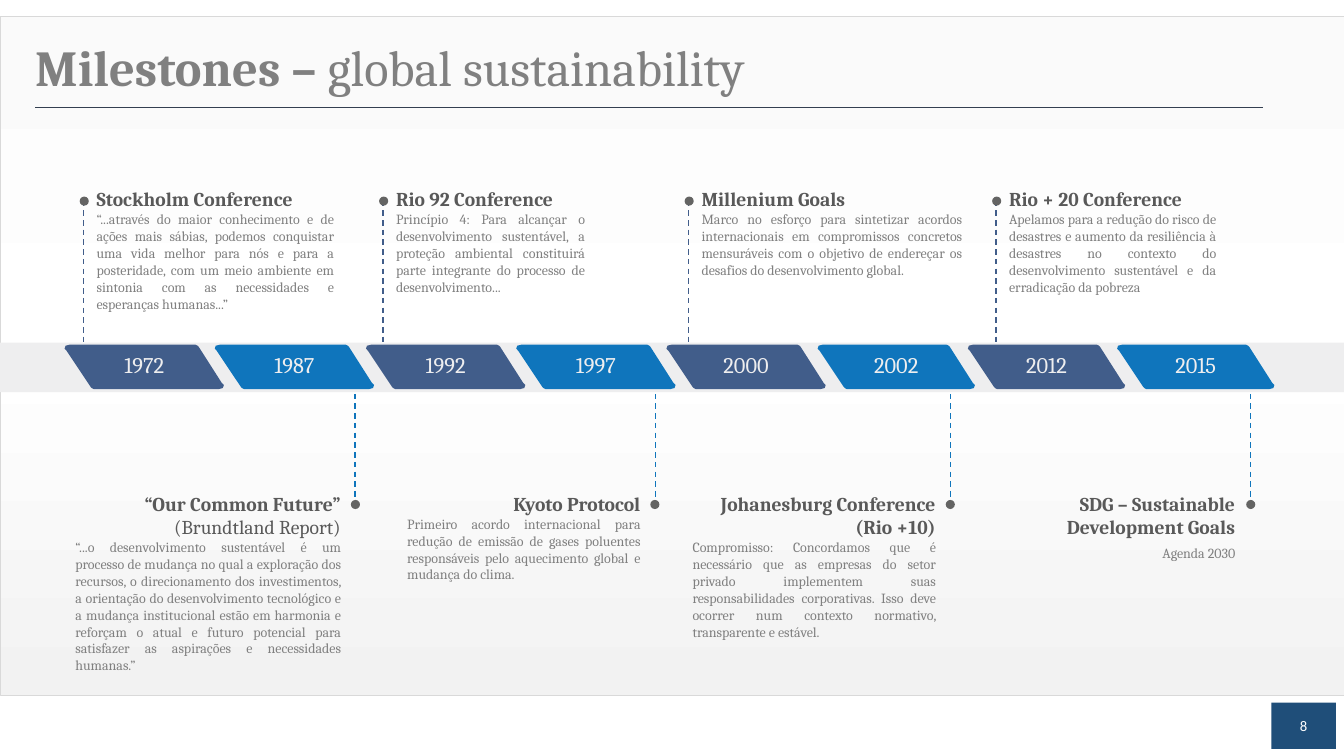
import copy
import pptx
import pptx.util
import pptx.dml.color
import pptx.enum.dml
import pptx.enum.shapes
import pptx.enum.text
import pptx.oxml.ns
import lxml.etree

Inches = pptx.util.Inches
Pt = pptx.util.Pt
ALIGN = pptx.enum.text.PP_ALIGN
SHAPE = pptx.enum.shapes.MSO_SHAPE
DASH = pptx.enum.dml.MSO_LINE
NAVY, BLUE, DARK, GRAY, LIGHT = "415D8A", "0F75BC", "595959", "808080", "EEEEEF"


def paint(fill, color):
    fill.solid()
    fill.fore_color.rgb = pptx.dml.color.RGBColor.from_string(color)


def style(paragraph, size, color, align, bold=False, font="Cambria"):
    paragraph.alignment = align
    for run in paragraph.runs:
        run.font.name = font
        run.font.size = Pt(size)
        run.font.bold = bold
        paint(run.font.fill, color)


presentation = pptx.Presentation()
presentation.slide_width = Inches(13.33)
presentation.slide_height = Inches(7.5)
slide = presentation.slides.add_slide(presentation.slide_layouts[6])
shapes = slide.shapes

panel = shapes.add_shape(SHAPE.RECTANGLE, 0, Inches(0.16), Inches(13.33), Inches(6.74))
panel.shadow.inherit = False
panel.fill.gradient()
panel.fill.gradient_angle = 90
stop_list = panel.fill._fill._gradFill.gsLst
stop_list.append(copy.deepcopy(stop_list[-1]))
for stop, position, color in zip(panel.fill.gradient_stops, (0, 0.5, 1), ("F2F2F2", "FFFFFF", "FAFAFA")):
    stop.position = position
    stop.color.rgb = pptx.dml.color.RGBColor.from_string(color)
paint(panel.line.fill, "D9D9D9")
panel.line.width = Pt(0.25)

page = shapes.add_shape(SHAPE.RECTANGLE, Inches(12.61), Inches(6.97), Inches(0.64), Inches(0.46))
page.shadow.inherit = False
paint(page.fill, "1F4E79")
page.line.fill.background()
page.text_frame.text = "8"
page.text_frame.vertical_anchor = pptx.enum.text.MSO_ANCHOR.MIDDLE
style(page.text_frame.paragraphs[0], 10.5, "FFFFFF", ALIGN.CENTER, font="Calibri")

title = shapes.add_textbox(Inches(0.35), Inches(0.31), Inches(12.16), Inches(0.71))
title.text_frame.word_wrap = True
title.text_frame.margin_left = title.text_frame.margin_right = 0
title_paragraph = title.text_frame.paragraphs[0]
title_paragraph.text = "Milestones – "
title_paragraph.add_run().text = "global sustainability"
style(title_paragraph, 36, GRAY, ALIGN.LEFT)
title_paragraph.runs[0].font.bold = True

upper, lower = 1.81, 4.83
milestones = [
    (0.86, upper, 2.55, 1.35, ["Stockholm Conference"],
     "“...através do maior conhecimento e de ações mais sábias, podemos conquistar uma vida melhor para nós e para a posteridade, com um meio ambiente em sintonia com as necessidades e esperanças humanas...”"),
    (3.83, upper, 2.07, 1.18, ["Rio 92 Conference"],
     "Princípio 4: Para alcançar o desenvolvimento sustentável, a proteção ambiental constituirá parte integrante do processo de desenvolvimento..."),
    (6.86, upper, 2.78, 1.01, ["Millenium Goals"],
     "Marco no esforço para sintetizar acordos internacionais em compromissos concretos mensuráveis com o objetivo de endereçar os desafios do desenvolvimento global."),
    (9.91, upper, 2.25, 1.18, ["Rio + 20 Conference"],
     "Apelamos para a redução do risco de desastres e aumento da resiliência à desastres no contexto do desenvolvimento sustentável e da erradicação da pobreza"),
    (0.65, lower, 2.83, 1.92, ["“Our Common Future”", "(Brundtland Report)"],
     "“...o desenvolvimento sustentável é um processo de mudança no qual a exploração dos recursos, o direcionamento dos investimentos, a orientação do desenvolvimento tecnológico e a mudança institucional estão em harmonia e reforçam o atual e futuro potencial para satisfazer as aspirações e necessidades humanas.”"),
    (3.94, lower, 2.51, 1.01, ["Kyoto Protocol"],
     "Primeiro acordo internacional para redução de emissão de gases poluentes responsáveis pelo aquecimento global e mudança do clima."),
    (6.77, lower, 2.61, 1.58, ["Johanesburg Conference", "(Rio +10)"],
     "Compromisso: Concordamos que é necessário que as empresas do setor privado implementem suas responsabilidades corporativas. Isso deve ocorrer num contexto normativo, transparente e estável."),
    (10.22, lower, 2.13, 0.81, ["SDG – Sustainable Development Goals"], "Agenda 2030"),
]
for left, top, width, height, headings, body in milestones:
    box = shapes.add_textbox(Inches(left), Inches(top), Inches(width), Inches(height))
    frame = box.text_frame
    frame.word_wrap = True
    frame.text = "\n".join(headings + [body])
    for paragraph in frame.paragraphs[:-1]:
        style(paragraph, 14, DARK, ALIGN.LEFT if top == upper else ALIGN.RIGHT,
              bold=paragraph.text != "(Brundtland Report)")
    style(frame.paragraphs[-1], 10, GRAY, ALIGN.JUSTIFY)
    if body == "Agenda 2030":
        frame.paragraphs[-1].alignment = ALIGN.RIGHT
        frame.paragraphs[-1].space_before = Pt(4)

lines = [(0.35, 1.06, 12.52, 1.06, "333F50", 0.25, DASH.ROUND_DOT)]
lines += [(x, 1.99, x, 3.54, NAVY, 1, DASH.DASH) for x in (0.83, 3.8, 6.83, 9.88)]
lines += [(x, 3.81, x, 5.02, BLUE, 1, DASH.DASH) for x in (3.52, 6.5, 9.43, 12.4)]
for x1, y1, x2, y2, color, weight, dash in lines:
    line = shapes.add_connector(pptx.enum.shapes.MSO_CONNECTOR.STRAIGHT,
                                Inches(x1), Inches(y1), Inches(x2), Inches(y2))
    paint(line.line.fill, color)
    line.line.width = Pt(weight)
    line.line.dash_style = dash
    lxml.etree.SubElement(line._element.spPr, pptx.oxml.ns.qn("a:effectLst"))

marks = [(SHAPE.OVAL, x, 1.95, 0.09, 0.09, "646463") for x in (0.79, 3.76, 6.79, 9.84)]
marks += [(SHAPE.OVAL, x, 4.96, 0.09, 0.09, "646463") for x in (3.48, 6.45, 9.38, 12.36)]
marks.append((SHAPE.RECTANGLE, 0, 3.4, 13.33, 0.49, LIGHT))
for kind, left, top, width, height, color in marks:
    mark = shapes.add_shape(kind, Inches(left), Inches(top), Inches(width), Inches(height))
    mark.shadow.inherit = False
    paint(mark.fill, color)
    mark.line.fill.background()

years = [
    ("1972", 0.64, 158), ("1987", 2.13, 158), ("1992", 3.63, 158), ("1997", 5.12, 158),
    ("2000", 6.61, 158), ("2002", 8.11, 156), ("2012", 9.6, 156), ("2015", 11.08, 156),
]
for index, (year, left, width) in enumerate(years):
    outline = [(2, 6), (0, 4), (1, 1), (5, 0), (width - 28, 0), (width - 26, 1), (width - 25, 2),
               (width - 2, 38), (width, 40), (width - 1, 43), (width - 5, 44), (29, 44), (27, 43)]
    builder = shapes.build_freeform(26, 42, scale=Inches(0.01))
    builder.add_line_segments(outline, close=True)
    tile = builder.convert_to_shape(Inches(left), Inches(3.42))
    tile.shadow.inherit = False
    paint(tile.fill, BLUE if index % 2 else NAVY)
    tile.line.fill.background()
    frame = tile.text_frame
    frame.margin_left = frame.margin_right = frame.margin_top = 0
    frame.margin_bottom = Inches(0.05)
    frame.vertical_anchor = pptx.enum.text.MSO_ANCHOR.MIDDLE
    frame.text = year
    style(frame.paragraphs[0], 16, LIGHT, ALIGN.CENTER)

presentation.save("out.pptx")
